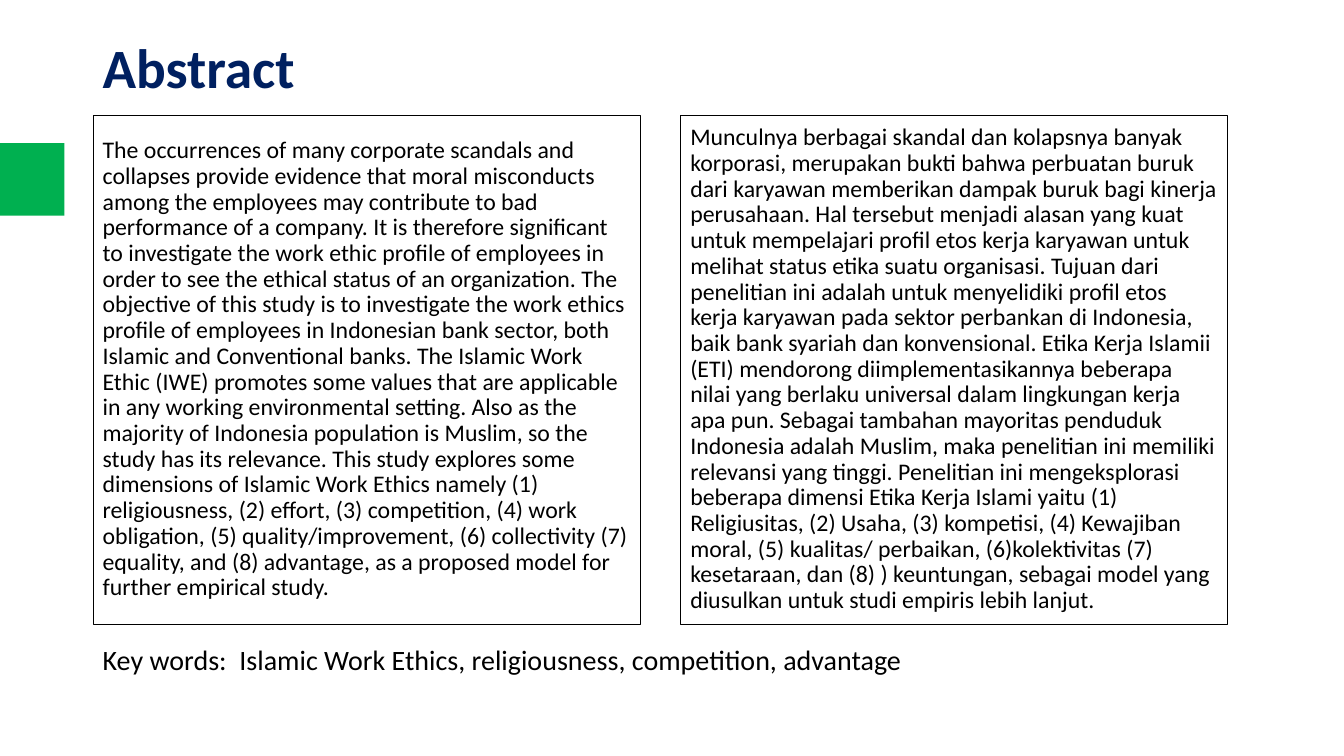
from dataclasses import dataclass

from pptx import Presentation
from pptx.dml.color import RGBColor
from pptx.enum.shapes import MSO_SHAPE
from pptx.enum.text import MSO_ANCHOR, PP_ALIGN
from pptx.util import Pt

GREEN = RGBColor(0x00, 0xB0, 0x50)
NAVY = RGBColor(0x00, 0x20, 0x60)
BLACK = RGBColor(0x00, 0x00, 0x00)
FONT = "Calibri"
LEFT_MARGIN = 66.24

# One entry per sentence
ENGLISH = (
    "The occurrences of many corporate scandals and collapses provide evidence that moral "
    "misconducts among the employees may contribute to bad performance of a company.",
    "It is therefore significant to investigate the work ethic profile of employees in order "
    "to see the ethical status of an organization.",
    "The objective of this study is to investigate the work ethics profile of employees in "
    "Indonesian bank sector, both Islamic and Conventional banks.",
    "The Islamic Work Ethic (IWE) promotes some values that are applicable in any working "
    "environmental setting.",
    "Also as the majority of Indonesia population is Muslim, so the study has its relevance.",
    "This study explores some dimensions of Islamic Work Ethics namely (1) religiousness, "
    "(2) effort, (3) competition, (4) work obligation, (5) quality/improvement, "
    "(6) collectivity (7) equality, and (8) advantage, as a proposed model for further "
    "empirical study.",
)
INDONESIAN = (
    "Munculnya berbagai skandal dan kolapsnya banyak korporasi, merupakan bukti bahwa "
    "perbuatan buruk dari karyawan memberikan dampak buruk bagi kinerja perusahaan.",
    "Hal tersebut menjadi alasan yang kuat untuk mempelajari profil etos kerja karyawan untuk "
    "melihat status etika suatu organisasi.",
    "Tujuan dari penelitian ini adalah untuk menyelidiki profil etos kerja karyawan pada "
    "sektor perbankan di Indonesia, baik bank syariah dan konvensional.",
    "Etika Kerja Islamii (ETI) mendorong diimplementasikannya beberapa nilai yang berlaku "
    "universal dalam lingkungan kerja apa pun.",
    "Sebagai tambahan mayoritas penduduk Indonesia adalah Muslim, maka penelitian ini "
    "memiliki relevansi yang tinggi.",
    "Penelitian ini mengeksplorasi beberapa dimensi Etika Kerja Islami yaitu (1) Religiusitas, "
    "(2) Usaha, (3) kompetisi, (4) Kewajiban moral, (5) kualitas/ perbaikan, (6)kolektivitas "
    "(7) kesetaraan, dan (8) ) keuntungan, sebagai model yang diusulkan untuk studi empiris "
    "lebih lanjut.",
)
KEY_WORDS = "Key words:  Islamic Work Ethics, religiousness, competition, advantage"


@dataclass(frozen=True)
class Panel:
    left: float
    sentences: tuple[str, ...]


PANELS = [Panel(LEFT_MARGIN, ENGLISH), Panel(486, INDONESIAN)]


def write(shape, text: str, *, size: float, color: RGBColor = BLACK, bold: bool = False,
          anchor: MSO_ANCHOR = MSO_ANCHOR.MIDDLE, line_spacing: float = 0.9,
          wrap: bool = True) -> None:
    frame = shape.text_frame
    frame.word_wrap = wrap
    frame.vertical_anchor = anchor
    para = frame.paragraphs[0]
    para.alignment = PP_ALIGN.LEFT
    para.line_spacing = line_spacing
    span = para.add_run()
    span.text = text
    span.font.name = FONT
    span.font.size = Pt(size)
    span.font.bold = bold
    span.font.color.rgb = color


def add_rectangle(page, left: float, top: float, width: float, height: float):
    box = page.shapes.add_shape(MSO_SHAPE.RECTANGLE, Pt(left), Pt(top), Pt(width), Pt(height))
    box.shadow.inherit = False
    return box


def add_panel(page, panel: Panel) -> None:
    box = add_rectangle(page, panel.left, 82.08, 390.96, 363.6)
    box.fill.background()
    box.line.color.rgb = BLACK
    box.line.width = Pt(0.25)
    write(box, " ".join(panel.sentences), size=17)


def main() -> None:
    deck = Presentation()
    deck.slide_width, deck.slide_height = Pt(960), Pt(540)
    page = deck.slides.add_slide(deck.slide_layouts[6])

    # Green marker at the left edge
    marker = add_rectangle(page, 0, 102.24, 46.08, 51.84)
    marker.fill.solid()
    marker.fill.fore_color.rgb = GREEN
    marker.line.fill.background()

    # Title
    title = page.shapes.add_textbox(Pt(LEFT_MARGIN), Pt(28.8), Pt(828), Pt(42.48))
    write(title, "Abstract", size=39.6, color=NAVY, bold=True)

    # Abstract in both languages
    for panel in PANELS:
        add_panel(page, panel)

    # Key words
    key_words = page.shapes.add_textbox(Pt(LEFT_MARGIN), Pt(455.76), Pt(591.12), Pt(55.44))
    write(key_words, KEY_WORDS, size=20, anchor=MSO_ANCHOR.TOP, line_spacing=1.0, wrap=False)

    deck.save("out.pptx")


if __name__ == "__main__":
    main()
